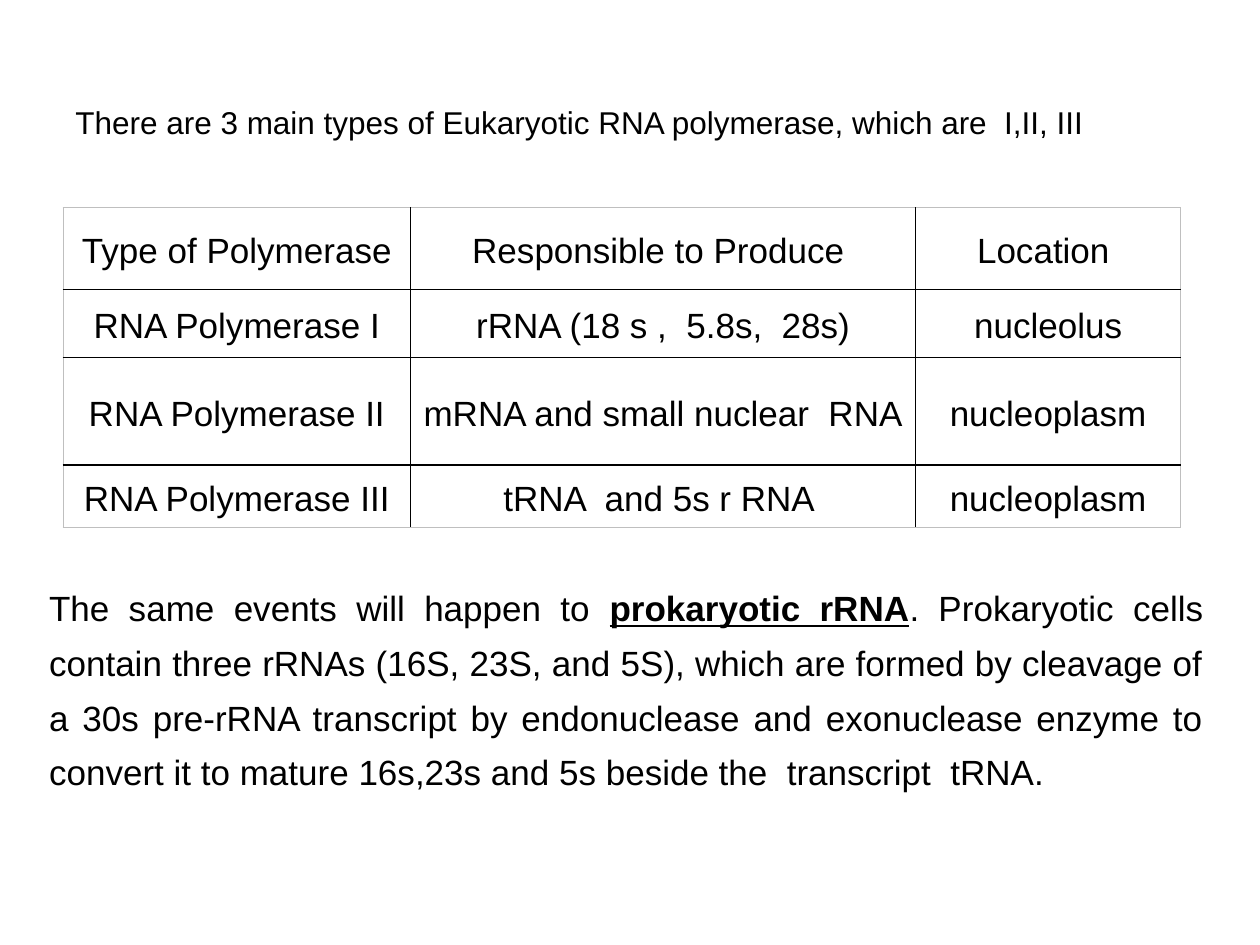
import lxml.etree
import pptx
import pptx.dml.color
import pptx.enum.text
import pptx.oxml.ns
import pptx.util

Cm = pptx.util.Cm
Pt = pptx.util.Pt
ALIGN = pptx.enum.text.PP_ALIGN
MIDDLE = pptx.enum.text.MSO_ANCHOR.MIDDLE
AUTO_SIZE = pptx.enum.text.MSO_AUTO_SIZE

COLORS = {"text": "000000", "grid": "000000", "frame": "BFBFBF"}

COLUMN_WIDTHS = [7.01, 10.18, 5.34]
ROW_HEIGHTS = [1.65, 1.37, 2.16, 1.27]
POLYMERASES = [
    ["Type of Polymerase", "Responsible to Produce ", "Location "],
    ["RNA Polymerase I", "rRNA (18 s ,  5.8s,  28s)", "nucleolus"],
    ["RNA Polymerase II", "mRNA and small nuclear  RNA", "nucleoplasm"],
    ["RNA Polymerase III", "tRNA  and 5s r RNA ", "nucleoplasm"],
]

CELL_PARAGRAPH = {"alignment": ALIGN.CENTER, "line_spacing": 1.15, "space_after": Pt(10)}
BODY_PARAGRAPH = {"alignment": ALIGN.JUSTIFY, "line_spacing": 1.3}
EMPHASIS = {"bold": True, "underline": True}


def apply_format(target, values):
    for name, value in values.items():
        setattr(target, name, value)


def write_paragraph(paragraph, runs, size, paragraph_format):
    """Fill a paragraph with (text, font format) runs."""
    apply_format(paragraph, paragraph_format)
    for text, font_format in runs:
        run = paragraph.add_run()
        run.text = text
        apply_format(run.font, {"name": "Arial", "size": Pt(size), **font_format})
        run.font.color.rgb = pptx.dml.color.RGBColor.from_string(COLORS["text"])


def add_text(slide, box, runs, size, paragraph_format, frame_format):
    shape = slide.shapes.add_textbox(*(Cm(value) for value in box))
    apply_format(shape.text_frame, {"word_wrap": True, **frame_format})
    write_paragraph(shape.text_frame.paragraphs[0], runs, size, paragraph_format)


def set_borders(cell, outer_sides):
    """Draw the four cell borders: outer sides in frame grey, inner in black."""
    qn = pptx.oxml.ns.qn
    properties = cell._tc.get_or_add_tcPr()
    for position, side in enumerate("LRTB"):
        color, width = ("frame", 0.5) if outer_sides[side] else ("grid", 1)
        line = lxml.etree.Element(qn(f"a:ln{side}"), w=str(Pt(width)))
        fill = lxml.etree.SubElement(line, qn("a:solidFill"))
        lxml.etree.SubElement(fill, qn("a:srgbClr"), val=COLORS[color])
        properties.insert(position, line)


def add_table(slide, left, top, rows):
    row_count, column_count = len(rows), len(rows[0])
    table = slide.shapes.add_table(
        row_count, column_count, Cm(left), Cm(top),
        Cm(sum(COLUMN_WIDTHS)), Cm(sum(ROW_HEIGHTS)),
    ).table
    apply_format(table, {"first_row": False, "horz_banding": False})
    for column, width in zip(table.columns, COLUMN_WIDTHS):
        column.width = Cm(width)
    for row, height in zip(table.rows, ROW_HEIGHTS):
        row.height = Cm(height)

    cell_format = {"vertical_anchor": MIDDLE}
    for side in ("left", "right", "top", "bottom"):
        cell_format[f"margin_{side}"] = 0
    for i, row in enumerate(rows):
        for j, text in enumerate(row):
            cell = table.cell(i, j)
            apply_format(cell, cell_format)
            cell.fill.background()
            set_borders(cell, {"L": j == 0, "R": j == column_count - 1,
                               "T": i == 0, "B": i == row_count - 1})
            write_paragraph(cell.text_frame.paragraphs[0], [(text, {})], 20, CELL_PARAGRAPH)


def main():
    presentation = pptx.Presentation()
    apply_format(presentation, {"slide_width": Cm(25.4), "slide_height": Cm(19.05)})
    slide = presentation.slides.add_slide(presentation.slide_layouts[6])

    # Table of polymerases
    add_table(slide, 1.27, 4.19, POLYMERASES)

    # Explanation below the table
    explanation = [
        ("The same events will happen to ", {}),
        ("prokaryotic rRNA", EMPHASIS),
        (". Prokaryotic cells contain three rRNAs (16S, 23S, and 5S), which are formed "
         "by cleavage of a 30s pre-rRNA transcript by endonuclease and exonuclease enzyme "
         "to convert it to mature 16s,23s and 5s beside the  transcript  tRNA.", {}),
    ]
    add_text(slide, (0.74, 10.62, 23.77, 6.32), explanation, 20,
             BODY_PARAGRAPH, {"vertical_anchor": MIDDLE})

    # Introduction above the table
    introduction = "There are 3 main types of Eukaryotic RNA polymerase, which are  I,II, III"
    add_text(slide, (1.27, 1.96, 21.59, 1.02), [(introduction, {})], 18,
             {}, {"auto_size": AUTO_SIZE.SHAPE_TO_FIT_TEXT})

    presentation.save("out.pptx")


if __name__ == "__main__":
    main()
